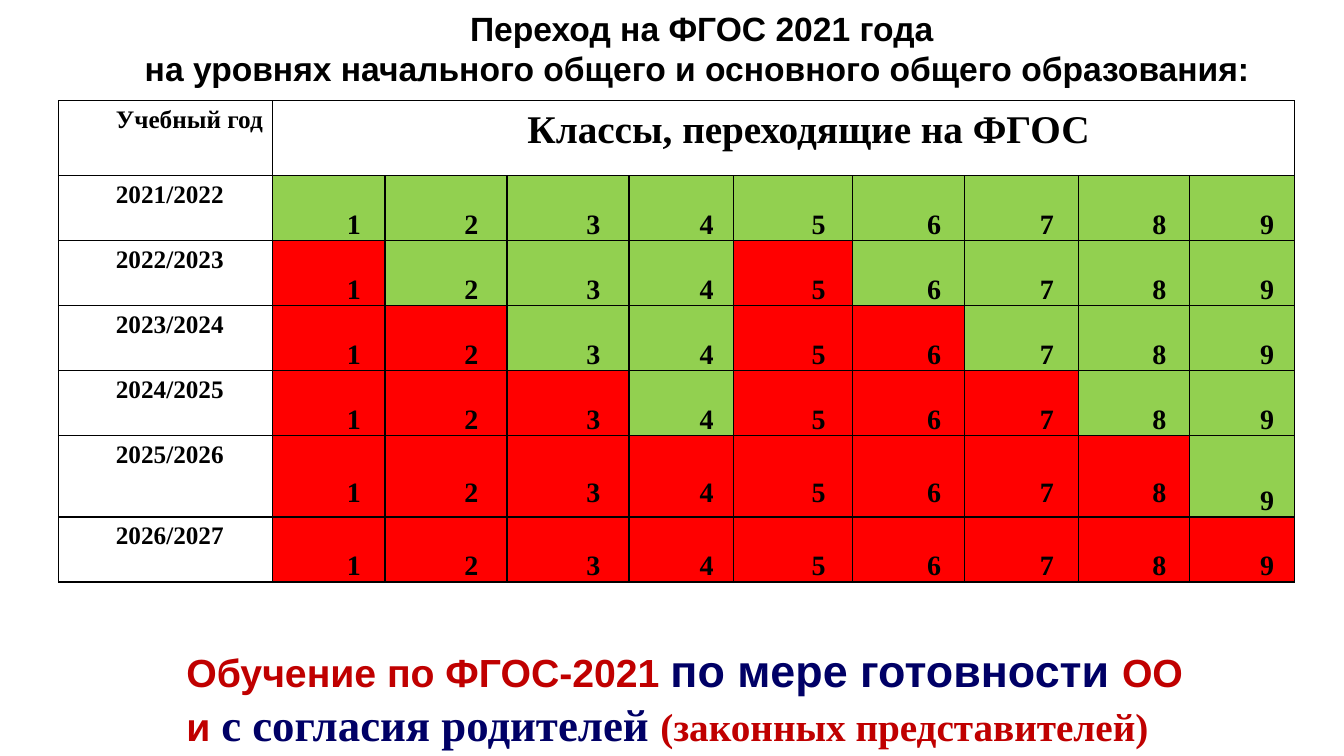
from dataclasses import dataclass

from lxml import etree
from pptx import Presentation
from pptx.dml.color import RGBColor
from pptx.enum.text import MSO_ANCHOR as Anchor, MSO_AUTO_SIZE as AutoSize, PP_ALIGN as Align
from pptx.oxml.ns import qn
from pptx.slide import Slide
from pptx.table import Table, _Cell as Cell
from pptx.text.text import Font, _Paragraph as Paragraph
from pptx.util import Inches, Pt


@dataclass(frozen=True)
class Theme:
    sans: str = "Arial"
    serif: str = "Times New Roman"
    black: str = "000000"
    green: str = "92D050"
    red: str = "FF0000"
    crimson: str = "C00000"
    navy: str = "000066"
    label_size: int = 18
    class_size: int = 20
    title_size: int = 24
    large_size: int = 28
    accent_size: int = 32


THEME = Theme()


@dataclass(frozen=True)
class Phrase:
    text: str
    color: str
    size: int = THEME.large_size
    font: str = THEME.sans


@dataclass(frozen=True)
class SchoolYear:
    name: str
    height: float = 0.645
    lift: float = 0  # raises the numbers of classes already moved


COLUMN_WIDTHS = (2.12, 1.12, 1.21, 1.21, 1.04, 1.18, 1.11, 1.13, 1.1, 1.04)
HEADER_HEIGHT = 0.745
FIRST_LINE_INDENT = 0.5
PRIMARY_CLASSES = 4
YEARS = (
    SchoolYear("2021/2022"),
    SchoolYear("2022/2023"),
    SchoolYear("2023/2024"),
    SchoolYear("2024/2025"),
    SchoolYear("2025/2026", height=0.805, lift=0.08),
    SchoolYear("2026/2027"),
)
TITLE = (
    ("Переход на ФГОС 2021 года", 0.59),
    ("на уровнях начального общего и основного общего образования:", FIRST_LINE_INDENT),
)
CONCLUSION = (
    (
        Phrase("Обучение по ФГОС-2021 ", THEME.crimson),
        Phrase("по мере готовности ", THEME.navy, THEME.accent_size),
        Phrase("ОО ", THEME.crimson),
    ),
    (
        Phrase("и ", THEME.crimson),
        Phrase("с согласия родителей ", THEME.navy, THEME.accent_size, THEME.serif),
        Phrase("(законных представителей)", THEME.crimson, font=THEME.serif),
    ),
)


def style_font(font: Font, name: str, size: int, color: str) -> None:
    font.name = name
    font.size = Pt(size)
    font.bold = True
    font.color.rgb = RGBColor.from_string(color)


def indent_first_line(paragraph: Paragraph, indent: float = FIRST_LINE_INDENT) -> None:
    properties = paragraph._p.get_or_add_pPr()
    properties.set("marL", "0")
    properties.set("indent", str(Inches(indent)))


def add_borders(cell: Cell) -> None:
    properties = cell._tc.get_or_add_tcPr()
    for position, side in enumerate(("lnL", "lnR", "lnT", "lnB")):
        line = etree.Element(qn(f"a:{side}"), w=str(Pt(1)))
        fill = etree.SubElement(line, qn("a:solidFill"))
        etree.SubElement(fill, qn("a:srgbClr"), val=THEME.black)
        properties.insert(position, line)


def write_cell(cell: Cell, text: str, size: int, align: Align = Align.LEFT) -> None:
    cell.margin_left = cell.margin_right = Inches(0.07)
    cell.margin_top, cell.margin_bottom = Inches(0.01), 0
    cell.fill.background()
    paragraph = cell.text_frame.paragraphs[0]
    paragraph.text = text
    paragraph.alignment = align
    paragraph.line_spacing = 1.15
    indent_first_line(paragraph)
    style_font(paragraph.font, THEME.serif, size, THEME.black)


def has_moved(school_class: int, year_index: int) -> bool:
    """Each stage moves one more class to the new standard every year."""
    stage_start = 0 if school_class <= PRIMARY_CLASSES else PRIMARY_CLASSES
    return school_class - stage_start <= year_index


def fill_year(table: Table, year_index: int, year: SchoolYear) -> None:
    row = year_index + 1
    table.rows[row].height = Inches(year.height)
    write_cell(table.cell(row, 0), year.name, THEME.label_size)
    for school_class in range(1, len(COLUMN_WIDTHS)):
        cell = table.cell(row, school_class)
        moved = has_moved(school_class, year_index)
        write_cell(cell, str(school_class), THEME.class_size, Align.CENTER)
        cell.vertical_anchor = Anchor.BOTTOM
        cell.margin_bottom = Inches(year.lift if moved else 0)
        cell.fill.solid()
        cell.fill.fore_color.rgb = RGBColor.from_string(THEME.red if moved else THEME.green)


def add_schedule(slide: Slide) -> None:
    height = HEADER_HEIGHT + sum(year.height for year in YEARS)
    table = slide.shapes.add_table(
        len(YEARS) + 1, len(COLUMN_WIDTHS),
        Inches(0.58), Inches(1), Inches(sum(COLUMN_WIDTHS)), Inches(height),
    ).table
    table.first_row = table.horz_banding = False
    for column, width in zip(table.columns, COLUMN_WIDTHS):
        column.width = Inches(width)

    # Header row
    table.rows[0].height = Inches(HEADER_HEIGHT)
    table.cell(0, 1).merge(table.cell(0, len(COLUMN_WIDTHS) - 1))
    write_cell(table.cell(0, 0), "Учебный год", THEME.label_size)
    write_cell(table.cell(0, 1), "Классы, переходящие на ФГОС", THEME.large_size, Align.CENTER)

    # One row per school year
    for year_index, year in enumerate(YEARS):
        fill_year(table, year_index, year)
    for cell in table.iter_cells():
        add_borders(cell)


def add_title(slide: Slide) -> None:
    frame = slide.shapes.add_textbox(Inches(0.33), 0, Inches(12.67), Inches(1.21)).text_frame
    frame.word_wrap = True
    frame.margin_top = Inches(0.08)
    for index, (text, indent) in enumerate(TITLE):
        paragraph = frame.add_paragraph() if index else frame.paragraphs[0]
        paragraph.text = text
        paragraph.alignment = Align.CENTER
        indent_first_line(paragraph, indent)
        style_font(paragraph.font, THEME.sans, THEME.title_size, THEME.black)


def add_conclusion(slide: Slide) -> None:
    box = slide.shapes.add_textbox(Inches(1.25), Inches(6.32), Inches(10.79), Inches(1.18))
    frame = box.text_frame
    frame.word_wrap = False
    frame.auto_size = AutoSize.SHAPE_TO_FIT_TEXT
    frame.vertical_anchor = Anchor.MIDDLE
    for index, phrases in enumerate(CONCLUSION):
        paragraph = frame.add_paragraph() if index else frame.paragraphs[0]
        paragraph.alignment = Align.JUSTIFY
        indent_first_line(paragraph)
        for phrase in phrases:
            run = paragraph.add_run()
            run.text = phrase.text
            style_font(run.font, phrase.font, phrase.size, phrase.color)


def main() -> None:
    presentation = Presentation()
    presentation.slide_width = Inches(13.33)
    presentation.slide_height = Inches(7.5)
    slide = presentation.slides.add_slide(presentation.slide_layouts[6])
    add_schedule(slide)
    add_title(slide)
    add_conclusion(slide)
    presentation.save("out.pptx")


if __name__ == "__main__":
    main()
